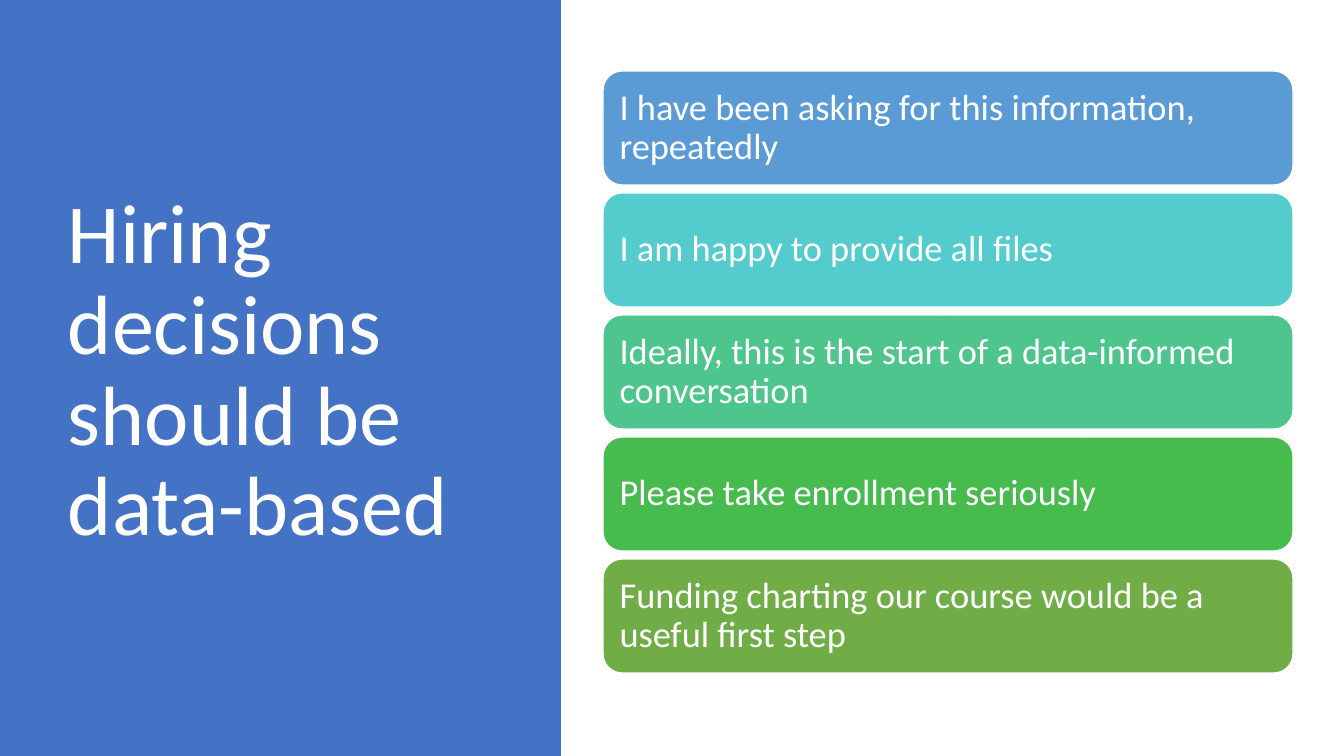
from dataclasses import dataclass

from pptx import Presentation
from pptx.dml.color import RGBColor
from pptx.enum.shapes import MSO_SHAPE
from pptx.enum.text import MSO_ANCHOR, PP_ALIGN
from pptx.util import Emu, Pt

TITLE = "Hiring decisions should be data-based"
POINTS = [
    ("I have been asking for this information, repeatedly", "5B9BD5"),
    ("I am happy to provide all files", "54CCCD"),
    ("Ideally, this is the start of a data-informed conversation", "4DC58D"),
    ("Please take enrollment seriously", "48BB4F"),
    ("Funding charting our course would be a useful first step", "70AD47"),
]


@dataclass(frozen=True)
class Theme:
    font: str = "Calibri"
    panel: str = "4472C4"
    light: str = "FFFFFF"
    title: int = 60
    body: int = 26
    edge: int = 1
    lead: float = 0.9


THEME = Theme()
SCALE = 914400 / 100.8
WIDE, HIGH = 1344, 756
PANEL = (0, 0, 561, HIGH)
HEAD = (57, 69, 419, 607)
LEFT, WIDTH, BAR, GAP = 603, 690, 114, 8
INSET = 11


def px(count):
    return Emu(round(count * SCALE))


def paint(shape, fill, line=None):
    shape.shadow.inherit = False
    shape.fill.solid()
    shape.fill.fore_color.rgb = RGBColor.from_string(fill)
    if line:
        shape.line.color.rgb = RGBColor.from_string(line)
        shape.line.width = Pt(THEME.edge)
    else:
        shape.line.fill.background()


def write(shape, text, size, inset):
    frame = shape.text_frame
    frame.word_wrap = True
    frame.vertical_anchor = MSO_ANCHOR.MIDDLE
    frame.margin_left = frame.margin_right = px(inset)
    frame.margin_top = frame.margin_bottom = px(inset)
    para = frame.paragraphs[0]
    para.alignment = PP_ALIGN.LEFT
    para.line_spacing = THEME.lead
    run = para.add_run()
    run.text = text
    run.font.name = THEME.font
    run.font.size = Pt(size)
    run.font.color.rgb = RGBColor.from_string(THEME.light)


def main():
    deck = Presentation()
    deck.slide_width, deck.slide_height = px(WIDE), px(HIGH)
    slide = deck.slides.add_slide(deck.slide_layouts[6])
    shapes = slide.shapes

    panel = shapes.add_shape(MSO_SHAPE.RECTANGLE, *map(px, PANEL))
    paint(panel, THEME.panel)
    head = shapes.add_textbox(*map(px, HEAD))
    write(head, TITLE, THEME.title, INSET)

    stack = len(POINTS) * (BAR + GAP) - GAP
    top = (HIGH - stack) // 2 - 6
    for row, (text, fill) in enumerate(POINTS):
        box = (LEFT, top + row * (BAR + GAP), WIDTH, BAR)
        bar = shapes.add_shape(MSO_SHAPE.ROUNDED_RECTANGLE, *map(px, box))
        paint(bar, fill, THEME.light)
        write(bar, text, THEME.body, INSET)

    deck.save("out.pptx")


if __name__ == "__main__":
    main()
